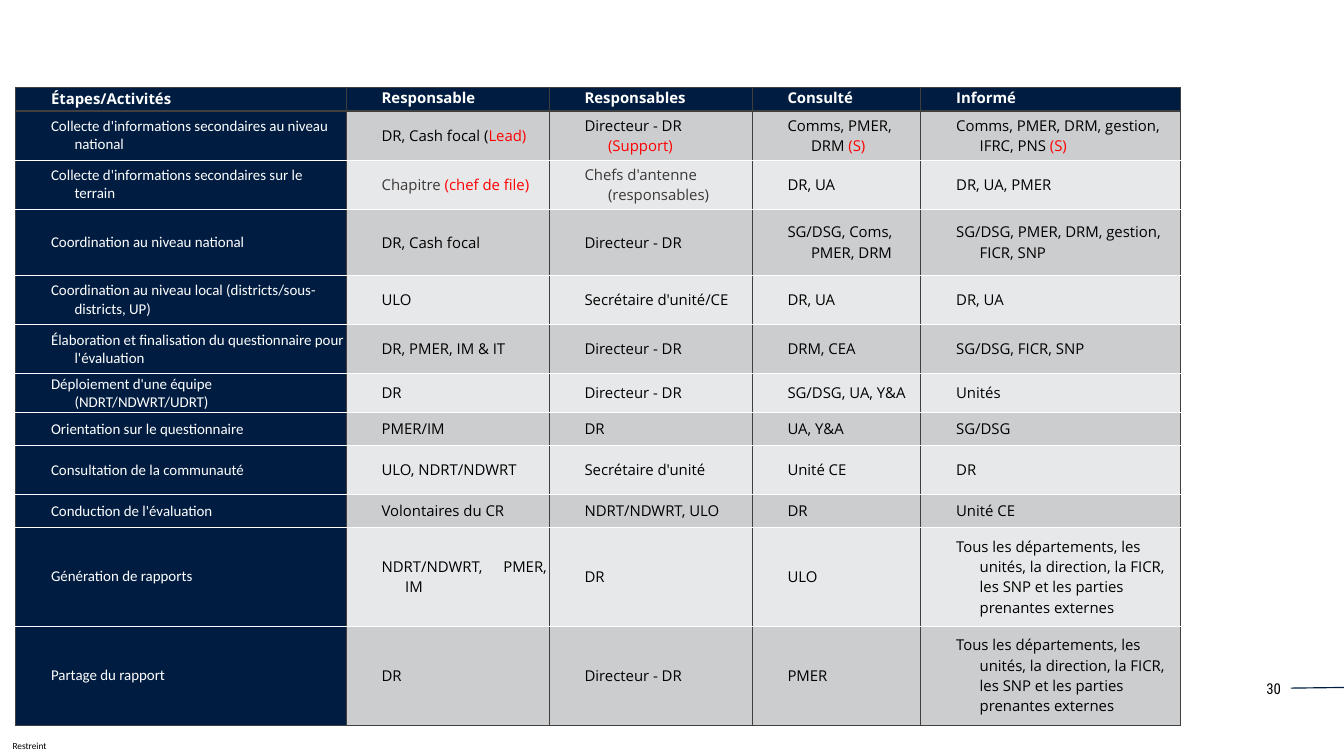
from dataclasses import dataclass

from lxml.etree import SubElement as Sub
from pptx import Presentation as Deck
from pptx.dml.color import RGBColor as Rgb
from pptx.enum.shapes import MSO_CONNECTOR as Conn
from pptx.enum.text import MSO_ANCHOR as Anchor, PP_ALIGN as Align
from pptx.oxml.ns import qn
from pptx.util import Pt

SCALE = 9144
COLS = [492, 302, 302, 251, 387]
TALLS = [35, 73, 73, 99, 73, 73, 58, 49, 73, 49, 147, 147]
ALL = ("Tous les départements, les unités, la direction, la FICR, "
       "les SNP et les parties prenantes externes")
ROWS = [
    ["Étapes/Activités", "Responsable", "Responsables", "Consulté", "Informé"],
    ["Collecte d'informations secondaires au niveau national",
     "DR, Cash focal (|Lead)", "Directeur - DR |(Support)",
     "Comms, PMER, DRM |(S)", "Comms, PMER, DRM, gestion, IFRC, PNS |(S)"],
    ["Collecte d'informations secondaires sur le terrain",
     "Chapitre |(chef de file)", "Chefs d'antenne (responsables)",
     "DR, UA", "DR, UA, PMER"],
    ["Coordination au niveau national", "DR, Cash focal", "Directeur - DR",
     "SG/DSG, Coms, PMER, DRM", "SG/DSG, PMER, DRM, gestion, FICR, SNP"],
    ["Coordination au niveau local (districts/sous-districts, UP)",
     "ULO", "Secrétaire d'unité/CE", "DR, UA", "DR, UA"],
    ["Élaboration et finalisation du questionnaire pour l'évaluation",
     "DR, PMER, IM & IT", "Directeur - DR", "DRM, CEA", "SG/DSG, FICR, SNP"],
    ["Déploiement d'une équipe (NDRT/NDWRT/UDRT)",
     "DR", "Directeur - DR", "SG/DSG, UA, Y&A", "Unités"],
    ["Orientation sur le questionnaire", "PMER/IM", "DR", "UA, Y&A", "SG/DSG"],
    ["Consultation de la communauté",
     "ULO, NDRT/NDWRT", "Secrétaire d'unité", "Unité CE", "DR"],
    ["Conduction de l'évaluation",
     "Volontaires du CR", "NDRT/NDWRT, ULO", "DR", "Unité CE"],
    ["Génération de rapports", "NDRT/NDWRT, PMER, IM", "DR", "ULO", ALL],
    ["Partage du rapport", "DR", "Directeur - DR", "PMER", ALL],
]


def px(num):
    """Turn px into EMU."""
    return num * SCALE


@dataclass(frozen=True)
class Theme:
    """Colours, fonts and type sizes."""
    navy: str = "001D41"
    white: str = "FFFFFF"
    black: str = "000000"
    grey: str = "3B3838"
    red: str = "FF0000"
    rule: str = "3F3F3F"
    bands: tuple = ("E7E8E9", "CCCDCF")
    sans: str = "Open Sans"
    label: str = "Calibri"
    page: str = "Roboto Condensed"
    body: int = 16
    small: int = 10


class Page:
    """Holds the theme and the current slide."""

    def __init__(self, slide, theme):
        """Keep the slide and its theme."""
        self.slide = slide
        self.theme = theme

    def run(self, para, text, font, size, color, bold=False):
        """Add one styled run."""
        run = para.add_run()
        run.text = text
        run.font.name = font
        run.font.size = Pt(size)
        run.font.bold = bold
        run.font.color.rgb = Rgb.from_string(color)

    def text(self, box, text, font, size, align=Align.LEFT, pad=(10, 5),
             anchor=Anchor.TOP):
        """Add a one-line text box."""
        frame = self.slide.shapes.add_textbox(*map(px, box)).text_frame
        frame.word_wrap = True
        frame.vertical_anchor = anchor
        frame.margin_left = frame.margin_right = px(pad[0])
        frame.margin_top = frame.margin_bottom = px(pad[1])
        para = frame.paragraphs[0]
        para.alignment = align
        self.run(para, text, font, size, self.theme.black)

    def line(self, ends, color, width):
        """Add a straight line without shadow."""
        line = self.slide.shapes.add_connector(Conn.STRAIGHT, *map(px, ends))
        line.line.color.rgb = Rgb.from_string(color)
        line.line.width = Pt(width)
        Sub(line._element.spPr, qn("a:effectLst"))

    def edge(self, cell, side, width):
        """Draw one border of a cell."""
        props = cell._tc.get_or_add_tcPr()
        line = Sub(props, qn(f"a:ln{side}"), w=str(Pt(width)))
        fill = Sub(line, qn("a:solidFill"))
        Sub(fill, qn("a:srgbClr"), val=self.theme.rule)

    def look(self, row, col):
        """Give the fill, font and ink of a cell."""
        look = self.theme
        if row == 0:
            return look.navy, look.sans, look.white
        if col == 0:
            return look.navy, look.label, look.white
        ink = look.grey if row == 2 and col < 3 else look.black
        return look.bands[row % 2], look.sans, ink

    def cell(self, cell, text, row, col):
        """Fill, frame and write one cell."""
        fill, font, ink = self.look(row, col)
        head = row == 0
        for side in "LRTB" if head else "LRB":
            self.edge(cell, side, 3 if head and side == "B" else 1)
        cell.fill.solid()
        cell.fill.fore_color.rgb = Rgb.from_string(fill)
        cell.margin_left = cell.margin_right = px(3)
        cell.margin_top = cell.margin_bottom = 0
        cell.vertical_anchor = Anchor.TOP if head and col else Anchor.MIDDLE
        para = cell.text_frame.paragraphs[0]
        para.alignment = Align.JUSTIFY if head or col == 1 else Align.LEFT
        para.space_after = Pt(12)
        props = para._p.get_or_add_pPr()
        props.set("marL", str(px(85)))
        props.set("indent", str(px(-35)))
        for part, color in zip(text.split("|"), (ink, self.theme.red)):
            self.run(para, part, font, self.theme.body, color, head)

    def table(self, left, top, cols, talls, rows):
        """Add the table of roles."""
        box = map(px, (left, top, sum(cols), sum(talls)))
        table = self.slide.shapes.add_table(len(rows), len(cols), *box).table
        table.horz_banding = False
        for item, wide in zip(table.columns, cols):
            item.width = px(wide)
        for item, tall in zip(table.rows, talls):
            item.height = px(tall)
        for row, texts in enumerate(rows):
            for col, text in enumerate(texts):
                self.cell(table.cell(row, col), text, row, col)


def main():
    """Build and save the slide."""
    deck = Deck()
    deck.slide_width, deck.slide_height = px(2000), px(1125)
    theme = Theme()
    page = Page(deck.slides.add_slide(deck.slide_layouts[6]), theme)
    page.text((0, 1096, 88, 29), "Restreint", theme.label, theme.small,
              Align.CENTER, (0, 0), Anchor.MIDDLE)
    page.text((1844, 1006, 72, 37), "30", theme.page, theme.body, Align.RIGHT)
    page.line((1921, 1024, 2000, 1023), theme.navy, 1.25)
    page.table(23, 130, COLS, TALLS, ROWS)
    deck.save("out.pptx")


if __name__ == "__main__":
    main()
